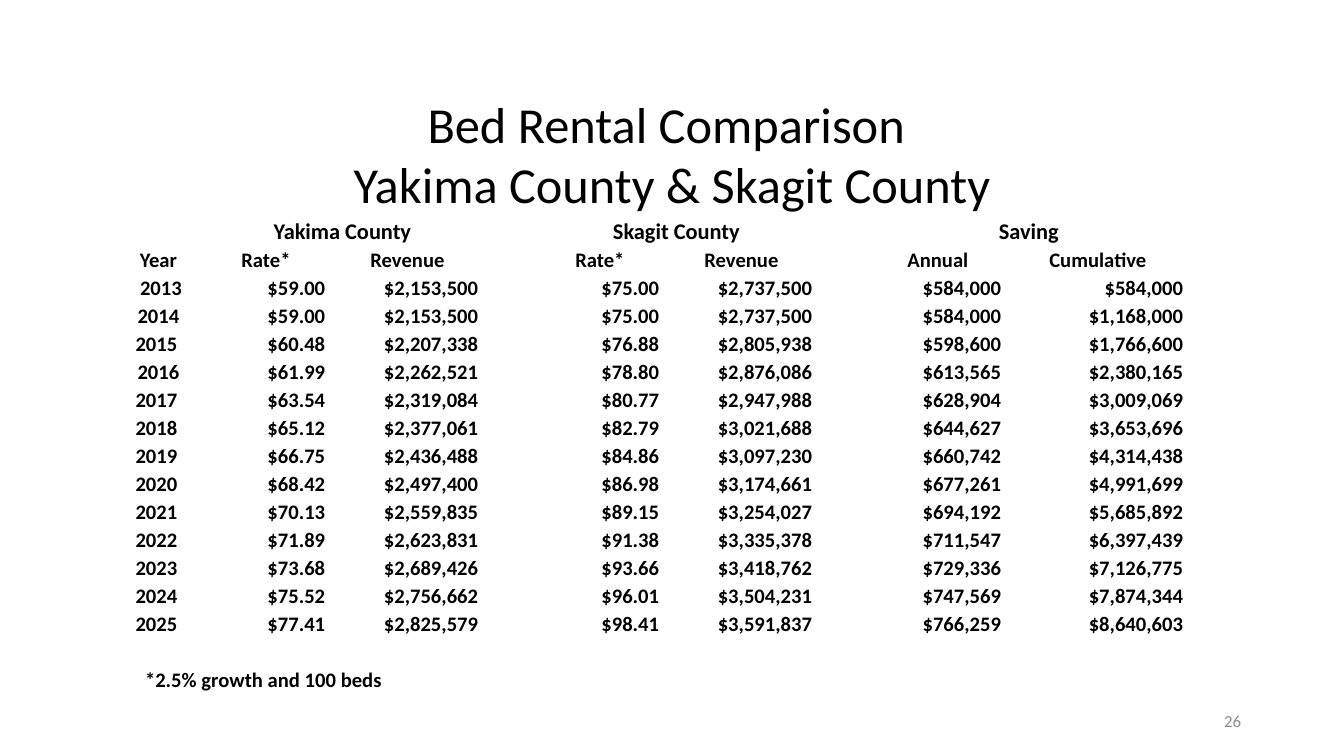
from dataclasses import dataclass
from typing import NamedTuple

from pptx import Presentation
from pptx import util as u
from pptx.dml import color
from pptx.enum import text


@dataclass(frozen=True)
class Theme:
    font: str = "Calibri"
    ink: str = "000000"
    gray: str = "8C8C8C"
    title: float = 36
    group: float = 16
    body: float = 14.7
    page: float = 12


class Entry(NamedTuple):
    row: int
    col: int
    words: str
    align: text.PP_ALIGN
    size: float
    indent: int = 0
    span: int = 1


class Label(NamedTuple):
    box: tuple[int, int, int, int]
    lines: tuple[str, ...]
    align: text.PP_ALIGN
    anchor: text.MSO_ANCHOR
    size: float
    ink: str


LOOK = Theme()
WIDE, HIGH = 1344, 756
SCALE = 12192000 / WIDE
LEFT, MID, RIGHT = text.PP_ALIGN.LEFT, text.PP_ALIGN.CENTER, text.PP_ALIGN.RIGHT

WIDTHS = (136, 130, 153, 51, 130, 153, 51, 138, 182)
ROWS, PITCH = 18, 28
FIELDS = (1, 2, 4, 5, 7, 8)
GROUPS = {1: "Yakima County", 4: "Skagit County", 7: "Saving"}
HEADS = ("Rate*", "Revenue", "Rate*", "Revenue", "Annual", "Cumulative")
START = 2013
INDENTS = {2013: 56, 2014: 51, 2016: 51}
RENTS = (
    ("59.00", "2,153,500", "75.00", "2,737,500", "584,000", "584,000"),
    ("59.00", "2,153,500", "75.00", "2,737,500", "584,000", "1,168,000"),
    ("60.48", "2,207,338", "76.88", "2,805,938", "598,600", "1,766,600"),
    ("61.99", "2,262,521", "78.80", "2,876,086", "613,565", "2,380,165"),
    ("63.54", "2,319,084", "80.77", "2,947,988", "628,904", "3,009,069"),
    ("65.12", "2,377,061", "82.79", "3,021,688", "644,627", "3,653,696"),
    ("66.75", "2,436,488", "84.86", "3,097,230", "660,742", "4,314,438"),
    ("68.42", "2,497,400", "86.98", "3,174,661", "677,261", "4,991,699"),
    ("70.13", "2,559,835", "89.15", "3,254,027", "694,192", "5,685,892"),
    ("71.89", "2,623,831", "91.38", "3,335,378", "711,547", "6,397,439"),
    ("73.68", "2,689,426", "93.66", "3,418,762", "729,336", "7,126,775"),
    ("75.52", "2,756,662", "96.01", "3,504,231", "747,569", "7,874,344"),
    ("77.41", "2,825,579", "98.41", "3,591,837", "766,259", "8,640,603"),
)
LABELS = (
    Label((890, 701, 361, 40), ("26",), RIGHT, text.MSO_ANCHOR.MIDDLE,
          LOOK.page, LOOK.gray),
    Label((0, 76, WIDE, 143),
          ("Bed Rental Comparison ", "Yakima County & Skagit County"),
          MID, text.MSO_ANCHOR.BOTTOM, LOOK.title, LOOK.ink),
)


def px(size: int) -> u.Emu:
    return u.Emu(round(size * SCALE))


def add_run(para, words: str, size: float, ink: str, bold: bool = False) -> None:
    run = para.add_run()
    run.text = words
    run.font.name = LOOK.font
    run.font.size = u.Pt(size)
    run.font.bold = bold
    run.font.color.rgb = color.RGBColor.from_string(ink)


def add_label(slide, label: Label) -> None:
    frame = slide.shapes.add_textbox(*map(px, label.box)).text_frame
    frame.word_wrap = True
    frame.vertical_anchor = label.anchor
    para = frame.paragraphs[0]
    para.alignment = label.align
    for spot, line in enumerate(label.lines):
        if spot:
            para.add_line_break()
        add_run(para, line, label.size, label.ink)


def list_cells() -> list[Entry]:
    cells = [Entry(0, col, name, MID, LOOK.group, span=2)
             for col, name in GROUPS.items()]
    cells.append(Entry(1, 0, "Year", MID, LOOK.body, 51))
    cells += [Entry(1, col, head, MID, LOOK.body)
              for col, head in zip(FIELDS, HEADS)]
    for step, rents in enumerate(RENTS):
        year = START + step
        cells.append(Entry(step + 2, 0, str(year), MID, LOOK.body,
                           INDENTS.get(year, 47)))
        cells += [Entry(step + 2, col, f"${rent} ", RIGHT, LOOK.body)
                  for col, rent in zip(FIELDS, rents)]
    cells.append(Entry(16, 0, "*2.5% growth and 100 beds", LEFT, LOOK.body,
                       79, span=3))
    return cells


def add_grid(slide) -> None:
    grid = slide.shapes.add_table(ROWS, len(WIDTHS), px(65), px(217),
                                  px(sum(WIDTHS)), px(ROWS * PITCH)).table
    grid.first_row = grid.horz_banding = False
    for col, width in zip(grid.columns, WIDTHS):
        col.width = px(width)
    for row in grid.rows:
        row.height = px(PITCH)
    for cell in grid.iter_cells():
        cell.fill.background()
        cell.vertical_anchor = text.MSO_ANCHOR.BOTTOM
        cell.margin_left = cell.margin_right = cell.margin_top = px(1)
        cell.margin_bottom = 0
        end = cell.text_frame.paragraphs[0]._p.get_or_add_endParaRPr()
        end.set("sz", str(round(LOOK.body * 100)))
    for item in list_cells():
        cell = grid.cell(item.row, item.col)
        if item.span > 1:
            cell.merge(grid.cell(item.row, item.col + item.span - 1))
        para = cell.text_frame.paragraphs[0]
        para.alignment = item.align
        if item.indent:
            para._p.get_or_add_pPr().set("marL", str(px(item.indent)))
        add_run(para, item.words, item.size, LOOK.ink, True)


def main() -> None:
    """Build the bed rental comparison slide."""
    deck = Presentation()
    deck.slide_width, deck.slide_height = px(WIDE), px(HIGH)
    slide = deck.slides.add_slide(deck.slide_layouts[6])
    for label in LABELS:
        add_label(slide, label)
    add_grid(slide)
    deck.save("out.pptx")


if __name__ == "__main__":
    main()
